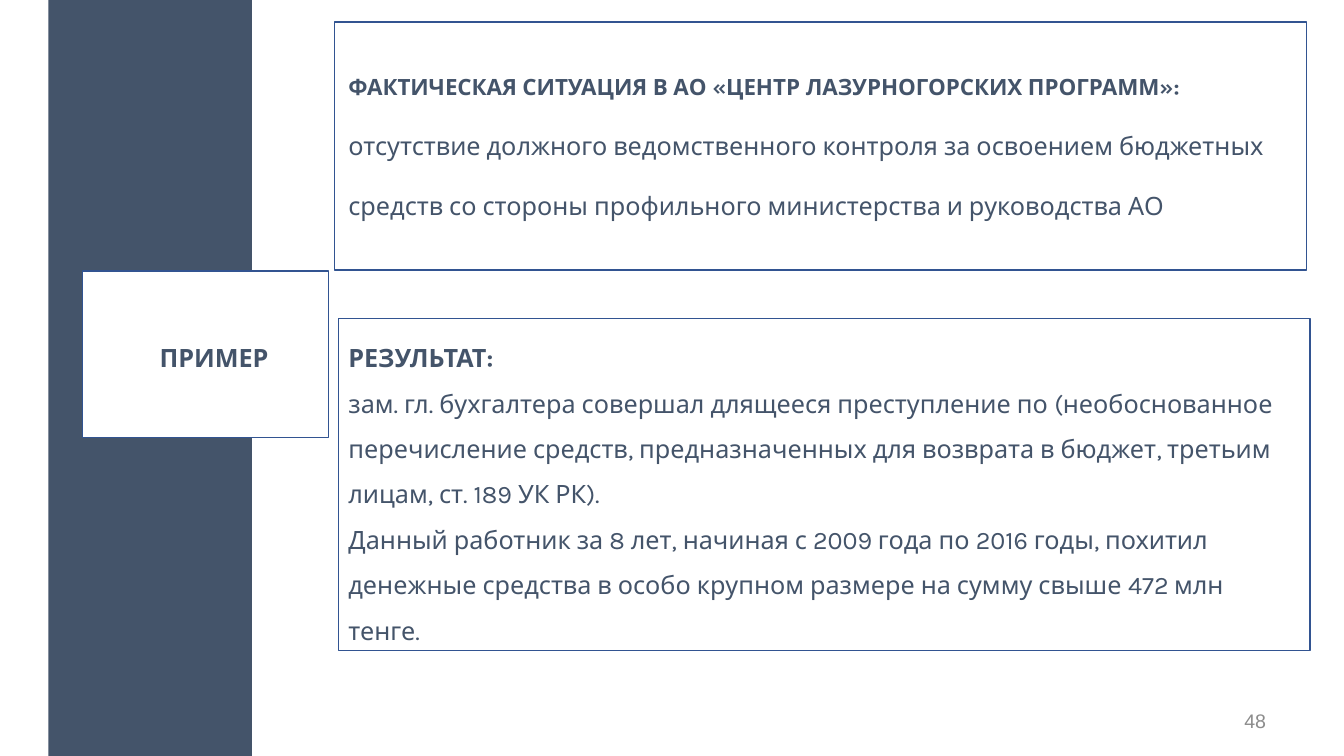
from dataclasses import dataclass

from pptx import Presentation
from pptx.dml.color import RGBColor
from pptx.enum.shapes import MSO_SHAPE
from pptx.enum.text import MSO_ANCHOR, MSO_AUTO_SIZE as AutoSize, PP_ALIGN
from pptx.slide import Slide
from pptx.util import Cm, Pt


@dataclass(frozen=True)
class Theme:
    slate: RGBColor = RGBColor(0x44, 0x54, 0x6A)
    outline: RGBColor = RGBColor(0x32, 0x54, 0x91)
    white: RGBColor = RGBColor(0xFF, 0xFF, 0xFF)
    grey: RGBColor = RGBColor(0x8C, 0x8C, 0x8C)
    body_font: str = "Karla"
    number_font: str = "Arial"
    body_size: int = 18
    heading_size: int = 16
    number_size: int = 14
    outline_width: int = 1


THEME = Theme()


@dataclass(frozen=True)
class Area:
    """A place on the slide, in centimetres."""
    left: float
    top: float
    width: float
    height: float

    def lengths(self) -> tuple[Cm, Cm, Cm, Cm]:
        return Cm(self.left), Cm(self.top), Cm(self.width), Cm(self.height)


@dataclass(frozen=True)
class Panel:
    area: Area
    fill: RGBColor | None = None
    outline: RGBColor | None = None


@dataclass(frozen=True)
class Phrase:
    text: str
    bold: bool = False
    size: int = THEME.body_size


@dataclass(frozen=True)
class TextBlock:
    """Each paragraph is a tuple of phrases, one to a line."""
    area: Area
    paragraphs: tuple[tuple[Phrase, ...], ...]
    align: PP_ALIGN = PP_ALIGN.LEFT
    spacing: float = 1.0
    font: str = THEME.body_font
    color: RGBColor = THEME.slate
    anchor: MSO_ANCHOR = MSO_ANCHOR.TOP
    auto_size: AutoSize = AutoSize.SHAPE_TO_FIT_TEXT


SIDE_BAND = Panel(Area(1.22, 0, 5.13, 19.05), fill=THEME.slate)
LABEL_PANEL = Panel(Area(2.08, 6.83, 6.2, 4.19), THEME.white, THEME.outline)
SITUATION_FRAME = Panel(Area(8.43, 0.56, 24.49, 6.25), outline=THEME.outline)
RESULT_FRAME = Panel(Area(8.53, 8.03, 24.49, 8.36), outline=THEME.outline)

PAGE_NUMBER = TextBlock(
    Area(24.54, 17.65, 7.62, 1.02),
    ((Phrase("48", size=THEME.number_size),),),
    align=PP_ALIGN.RIGHT,
    font=THEME.number_font,
    color=THEME.grey,
    anchor=MSO_ANCHOR.MIDDLE,
    auto_size=AutoSize.NONE,
)
LABEL = TextBlock(
    Area(2.08, 8.51, 6.63, 1.02),
    ((Phrase("ПРИМЕР", bold=True),),),
    align=PP_ALIGN.CENTER,
)
SITUATION = TextBlock(
    Area(8.53, 1.04, 24.59, 4.7),
    (
        (Phrase("ФАКТИЧЕСКАЯ СИТУАЦИЯ В АО «ЦЕНТР ЛАЗУРНОГОРСКИХ ПРОГРАММ»:",
                bold=True, size=THEME.heading_size),),
        (Phrase("отсутствие должного ведомственного контроля за освоением "
                "бюджетных средств со стороны профильного министерства "
                "и руководства АО"),),
    ),
    spacing=2.0,
)
RESULT = TextBlock(
    Area(8.53, 8.13, 24.31, 7.19),
    (
        (Phrase("РЕЗУЛЬТАТ: ", bold=True),
         Phrase("зам. гл. бухгалтера совершал длящееся преступление по "
                "(необоснованное перечисление средств, предназначенных для "
                "возврата в бюджет, третьим лицам, ст. 189 УК РК).")),
        (Phrase("Данный работник за 8 лет, начиная с 2009 года по 2016 годы, "
                "похитил денежные средства в особо крупном размере на сумму "
                "свыше 472 млн тенге."),),
    ),
    spacing=1.5,
)


def draw_panel(slide: Slide, panel: Panel) -> None:
    rectangle = slide.shapes.add_shape(MSO_SHAPE.RECTANGLE, *panel.area.lengths())
    rectangle.shadow.inherit = False
    if panel.fill is None:
        rectangle.fill.background()
    else:
        rectangle.fill.solid()
        rectangle.fill.fore_color.rgb = panel.fill
    if panel.outline is None:
        rectangle.line.fill.background()
    else:
        rectangle.line.color.rgb = panel.outline
        rectangle.line.width = Pt(THEME.outline_width)


def draw_text(slide: Slide, block: TextBlock) -> None:
    frame = slide.shapes.add_textbox(*block.area.lengths()).text_frame
    frame.word_wrap = True
    frame.auto_size = block.auto_size
    frame.vertical_anchor = block.anchor
    frame.text = "\n".join(
        "\v".join(phrase.text for phrase in phrases) for phrases in block.paragraphs
    )
    for paragraph, phrases in zip(frame.paragraphs, block.paragraphs):
        paragraph.alignment = block.align
        paragraph.line_spacing = block.spacing
        for run, phrase in zip(paragraph.runs, phrases):
            run.font.name = block.font
            run.font.size = Pt(phrase.size)
            run.font.bold = phrase.bold
            run.font.color.rgb = block.color


def main() -> None:
    presentation = Presentation()
    presentation.slide_width = Cm(33.87)
    presentation.slide_height = Cm(19.05)
    blank_layout = presentation.slide_layouts.get_by_name("Blank")
    slide = presentation.slides.add_slide(blank_layout)

    draw_text(slide, PAGE_NUMBER)
    for panel in (SIDE_BAND, LABEL_PANEL):
        draw_panel(slide, panel)
    for block in (LABEL, SITUATION, RESULT):
        draw_text(slide, block)
    for frame in (SITUATION_FRAME, RESULT_FRAME):
        draw_panel(slide, frame)

    presentation.save("out.pptx")


if __name__ == "__main__":
    main()
